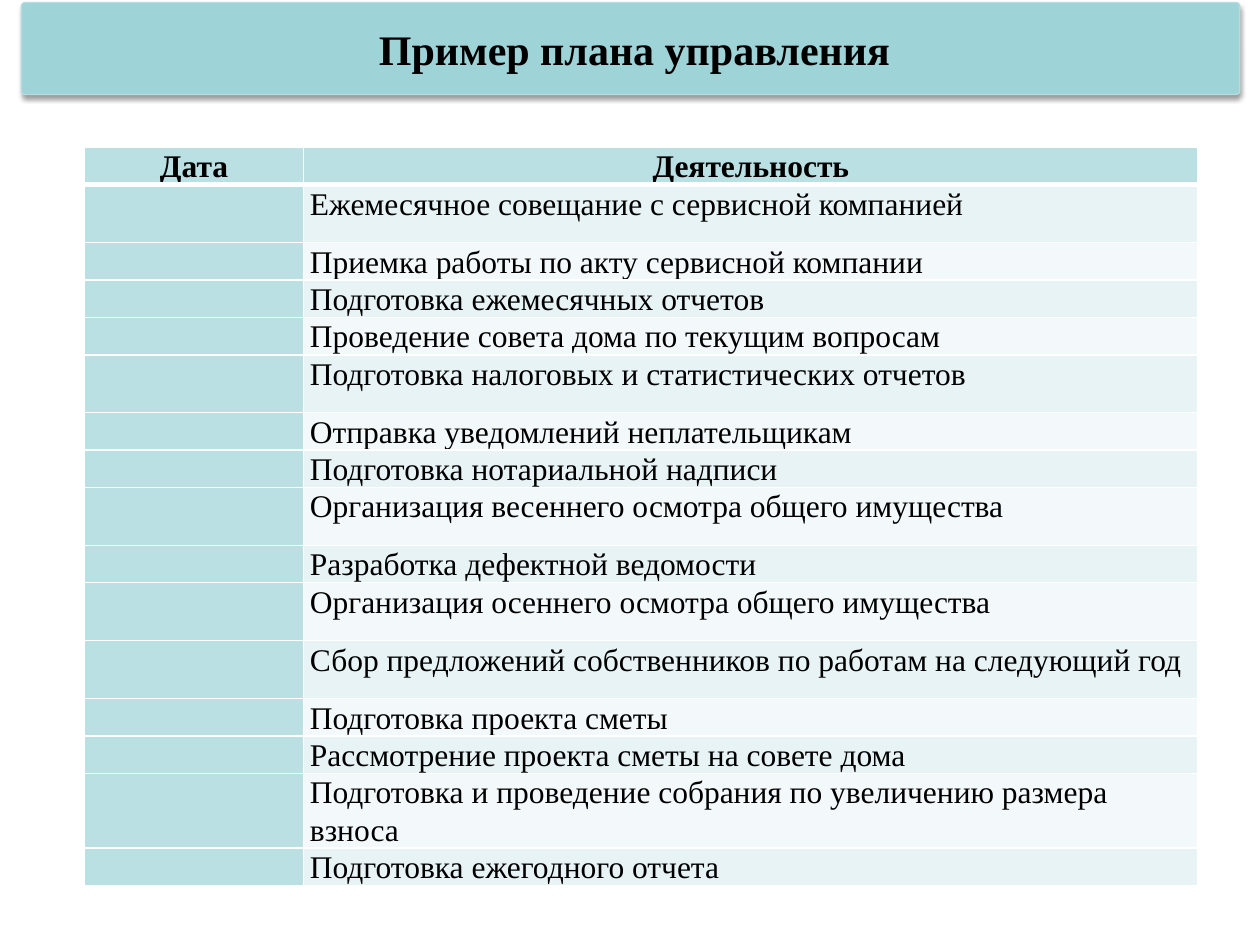
from lxml import etree
from pptx import Presentation
from pptx.dml.color import RGBColor
from pptx.enum import shapes, text
from pptx.oxml import ns
from pptx.util import Inches, Pt

TITLE = "Пример плана управления"
HEADERS = ("Дата", "Деятельность")
SHORT, TALL = 0.22, 0.46
ACTIVITIES = [
    ("Ежемесячное совещание с сервисной компанией", TALL),
    ("Приемка работы по акту сервисной компании", SHORT),
    ("Подготовка ежемесячных отчетов", SHORT),
    ("Проведение совета дома по текущим вопросам", SHORT),
    ("Подготовка налоговых и статистических отчетов", TALL),
    ("Отправка уведомлений неплательщикам", SHORT),
    ("Подготовка нотариальной надписи", SHORT),
    ("Организация весеннего осмотра общего имущества", TALL),
    ("Разработка дефектной ведомости", SHORT),
    ("Организация осеннего осмотра общего имущества", TALL),
    ("Сбор предложений собственников по работам на следующий год", TALL),
    ("Подготовка проекта сметы", SHORT),
    ("Рассмотрение проекта сметы на совете дома", SHORT),
    ("Подготовка и проведение собрания по увеличению размера взноса", TALL),
    ("Подготовка ежегодного отчета", SHORT),
]
HEADER_HEIGHT = 0.06
COLUMN_WIDTHS = (1.74, 7.1)
TABLE_LEFT, TABLE_TOP = 0.67, 1.17
BAR_BOX = [Inches(value) for value in (0.17, 0.02, 9.67, 0.73)]

FONT = "Times New Roman"
BLACK = RGBColor(0x00, 0x00, 0x00)
WHITE = RGBColor(0xFF, 0xFF, 0xFF)
BAR_FILL = RGBColor(0x9E, 0xD3, 0xD7)
BAR_LINE = RGBColor(0xB6, 0xDC, 0xDF)
HEADER_FILL = RGBColor(0xBB, 0xE0, 0xE3)
BAND_FILLS = (RGBColor(0xE7, 0xF3, 0xF4), RGBColor(0xF3, 0xF9, 0xFA))


def add_element(parent, tag, **attributes):
    element = etree.SubElement(parent, ns.qn(tag))
    for name, value in attributes.items():
        element.set(name, str(value))
    return element


def write_text(frame, content, size=18, bold=False, align=text.PP_ALIGN.LEFT,
               line_spacing=1.0, space_after=0):
    paragraph = frame.paragraphs[0]
    paragraph.alignment = align
    paragraph.line_spacing = line_spacing
    paragraph.space_after = Pt(space_after)
    run = paragraph.add_run()
    run.text = content
    run.font.name = FONT
    run.font.size = Pt(size)
    run.font.bold = bold
    run.font.color.rgb = BLACK


def format_cell(cell, fill, top=1, bottom=1):
    """Set margins, white borders (widths in points) and the fill."""
    cell.margin_left = cell.margin_right = Inches(0.05)
    cell.margin_top = cell.margin_bottom = 0
    properties = cell._tc.get_or_add_tcPr()
    for side, width in (("L", 1), ("R", 1), ("T", top), ("B", bottom)):
        line = add_element(properties, f"a:ln{side}", w=Pt(width))
        add_element(add_element(line, "a:solidFill"), "a:srgbClr", val=WHITE)
    cell.fill.solid()
    cell.fill.fore_color.rgb = fill


def add_title_bar(slide):
    bar = slide.shapes.add_shape(shapes.MSO_SHAPE.ROUNDED_RECTANGLE, *BAR_BOX)
    bar.adjustments[0] = 0.04
    bar.fill.solid()
    bar.fill.fore_color.rgb = BAR_FILL
    bar.line.color.rgb = BAR_LINE
    bar.line.width = Pt(0.75)
    bar.shadow.inherit = False
    effects = bar._element.spPr.find(ns.qn("a:effectLst"))
    shadow = add_element(effects, "a:outerShdw", blurRad=Pt(3.1), dist=Pt(1.6),
                         dir=90 * 60000, rotWithShape=0)
    color = add_element(shadow, "a:srgbClr", val=BLACK)
    add_element(color, "a:alpha", val=38000)

    title = slide.shapes.title
    title.left, title.top, title.width, title.height = BAR_BOX
    title._element.addprevious(bar._element)
    frame = title.text_frame
    frame.word_wrap = True
    frame.auto_size = text.MSO_AUTO_SIZE.NONE
    frame.vertical_anchor = text.MSO_ANCHOR.MIDDLE
    frame.margin_left, frame.margin_right = Inches(0.06), 0
    frame.margin_top = frame.margin_bottom = Inches(0.05)
    write_text(frame, TITLE, size=24, bold=True, align=text.PP_ALIGN.CENTER)


def add_plan_table(slide):
    heights = [HEADER_HEIGHT] + [height for _, height in ACTIVITIES]
    table = slide.shapes.add_table(
        len(heights), len(HEADERS), Inches(TABLE_LEFT), Inches(TABLE_TOP),
        Inches(sum(COLUMN_WIDTHS)), Inches(sum(heights))).table
    for column, width in zip(table.columns, COLUMN_WIDTHS):
        column.width = Inches(width)
    for row, height in zip(table.rows, heights):
        row.height = Inches(height)

    for index, header in enumerate(HEADERS):
        cell = table.cell(0, index)
        format_cell(cell, HEADER_FILL, bottom=3)
        write_text(cell.text_frame, header, bold=True, line_spacing=1.07,
                   align=text.PP_ALIGN.CENTER, space_after=8)
    for number, (activity, _) in enumerate(ACTIVITIES, start=1):
        top = 3 if number == 1 else 1
        date_cell, activity_cell = table.cell(number, 0), table.cell(number, 1)
        format_cell(date_cell, HEADER_FILL, top=top)
        date_cell.text_frame.paragraphs[0].font.size = Pt(12)
        format_cell(activity_cell, BAND_FILLS[(number - 1) % 2], top=top)
        write_text(activity_cell.text_frame, activity, line_spacing=1.07,
                   space_after=8)


def main():
    presentation = Presentation()
    presentation.slide_width = Inches(10)
    presentation.slide_height = Inches(7.5)
    slide = presentation.slides.add_slide(presentation.slide_layouts[5])
    add_plan_table(slide)
    add_title_bar(slide)
    presentation.save("out.pptx")


if __name__ == "__main__":
    main()
